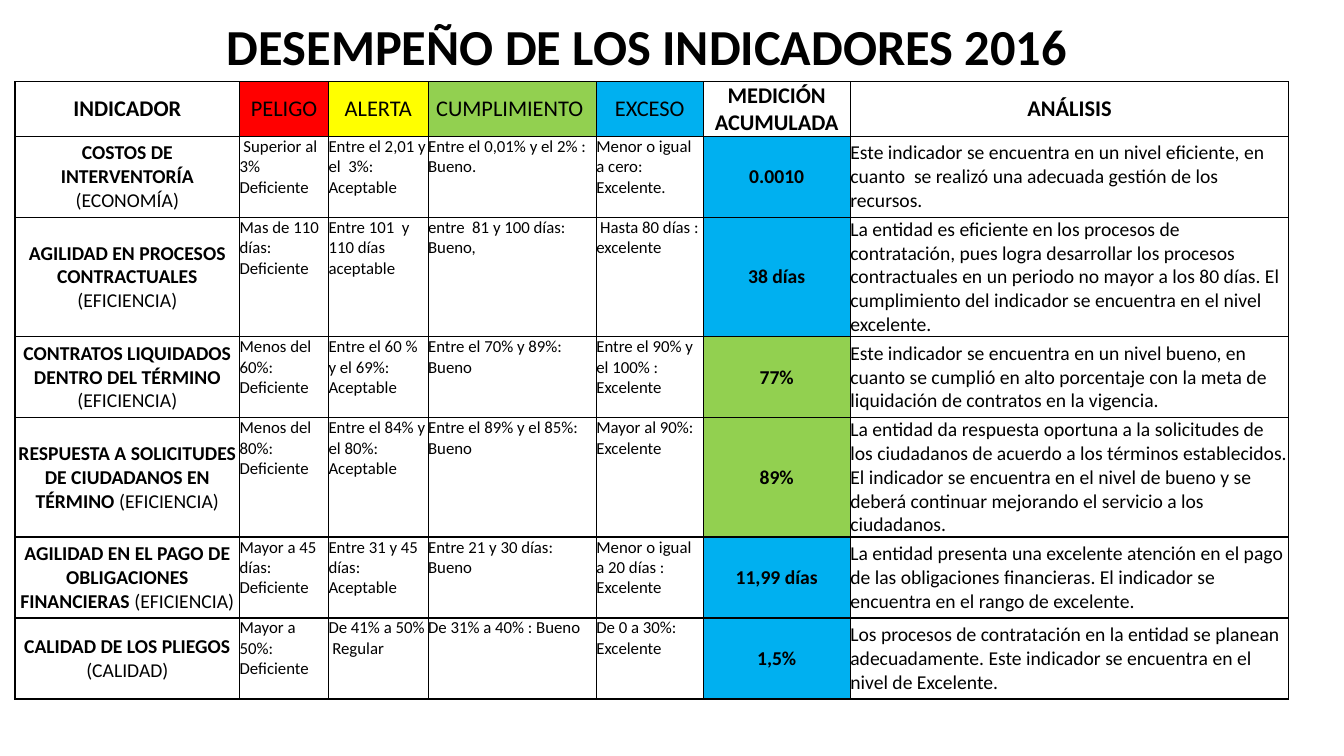
from dataclasses import dataclass

from lxml.etree import SubElement
from pptx import Presentation
from pptx.dml.color import RGBColor
from pptx.enum.text import MSO_ANCHOR as Anchor, MSO_AUTO_SIZE as AutoSize, PP_ALIGN as Align
from pptx.oxml.ns import qn
from pptx.util import Cm, Pt

COLOURS = {
    "black": "000000",
    "white": "FFFFFF",
    "danger": "FF0000",
    "alert": "FFFF00",
    "good": "92D050",
    "excellent": "00B0F0",
}
FONT = "Calibri"
COLUMN_WIDTHS = (5.66, 2.24, 2.51, 4.24, 2.69, 3.71, 11.05)
HEADER_HEIGHT = 1.36


@dataclass
class Heading:
    text: str
    fill: str = "white"
    bold: bool = True


@dataclass
class Indicator:
    name: str
    kind: str
    ranges: tuple[str, str, str, str]
    result: str
    level: str
    analysis: str
    height: float = 2.04


HEADINGS = (
    Heading("INDICADOR"),
    Heading("PELIGO", "danger", False),
    Heading("ALERTA", "alert", False),
    Heading("CUMPLIMIENTO ", "good", False),
    Heading("EXCESO", "excellent", False),
    Heading("MEDICIÓN ACUMULADA"),
    Heading("ANÁLISIS"),
)

INDICATORS = (
    Indicator(
        "COSTOS DE INTERVENTORÍA", "ECONOMÍA",
        (" Superior al 3% Deficiente", "Entre el 2,01 y el  3%: Aceptable",
         "Entre el 0,01% y el 2% : Bueno.", "Menor o igual a cero: Excelente."),
        "0.0010", "excellent",
        "Este indicador se encuentra en un nivel eficiente, en cuanto  se realizó "
        "una adecuada gestión de los recursos."),
    Indicator(
        "AGILIDAD EN PROCESOS CONTRACTUALES", "EFICIENCIA",
        ("Mas de 110 días: Deficiente", "Entre 101  y 110 días aceptable",
         "entre  81 y 100 días: Bueno,", " Hasta 80 días : excelente"),
        "38 días", "excellent",
        "La entidad es eficiente en los procesos de contratación, pues logra desarrollar "
        "los procesos contractuales en un periodo no mayor a los 80 días. El cumplimiento "
        "del indicador se encuentra en el nivel excelente.", 2.96),
    Indicator(
        "CONTRATOS LIQUIDADOS DENTRO DEL TÉRMINO", "EFICIENCIA",
        ("Menos del 60%: Deficiente", "Entre el 60 % y el 69%: Aceptable",
         "Entre el 70% y 89%: Bueno", "Entre el 90% y el 100% : Excelente"),
        "77%", "good",
        "Este indicador se encuentra en un nivel bueno, en cuanto se cumplió en alto "
        "porcentaje con la meta de liquidación de contratos en la vigencia."),
    Indicator(
        "RESPUESTA A SOLICITUDES DE CIUDADANOS EN TÉRMINO", "EFICIENCIA",
        ("Menos del 80%: Deficiente", "Entre el 84% y el 80%: Aceptable",
         "Entre el 89% y el 85%: Bueno", "Mayor al 90%: Excelente"),
        "89%", "good",
        "La entidad da respuesta oportuna a la solicitudes de los ciudadanos de acuerdo "
        "a los términos establecidos. El indicador se encuentra en el nivel de bueno y se "
        "deberá continuar mejorando el servicio a los ciudadanos.", 2.96),
    Indicator(
        "AGILIDAD EN EL PAGO DE OBLIGACIONES FINANCIERAS", "EFICIENCIA",
        ("Mayor a 45 días: Deficiente", "Entre 31 y 45 días: Aceptable",
         "Entre 21 y 30 días: Bueno", "Menor o igual a 20 días : Excelente"),
        "11,99 días", "excellent",
        "La entidad presenta una excelente atención en el pago de las obligaciones "
        "financieras. El indicador se encuentra en el rango de excelente."),
    Indicator(
        "CALIDAD DE LOS PLIEGOS", "CALIDAD",
        ("Mayor a 50%: Deficiente", "De 41% a 50%  Regular",
         "De 31% a 40% : Bueno", "De 0 a 30%: Excelente"),
        "1,5%", "excellent",
        "Los procesos de contratación en la entidad se planean adecuadamente. Este "
        "indicador se encuentra en el nivel de Excelente."),
)


def add_text(para, text: str, *, size: float, bold: bool = False, align=Align.LEFT) -> None:
    para.alignment = align
    span = para.add_run()
    span.text = text
    span.font.name = FONT
    span.font.size = Pt(size)
    span.font.bold = bold
    span.font.color.rgb = RGBColor.from_string(COLOURS["black"])


def add_borders(cell, widths: dict[str, float]) -> None:
    """Draw black cell edges; widths maps L, R, T and B to points."""
    properties = cell._tc.get_or_add_tcPr()
    for position, (side, width) in enumerate(widths.items()):
        line = SubElement(properties, qn(f"a:ln{side}"), w=str(Pt(width)))
        fill = SubElement(line, qn("a:solidFill"))
        SubElement(fill, qn("a:srgbClr"), val=COLOURS["black"])
        properties.insert(position, line)


def format_cell(cell, *, fill: str = "white", anchor=Anchor.MIDDLE,
                left: float = 1, right: float = 1):
    """Style a cell and return its paragraph."""
    cell.margin_left = cell.margin_right = cell.margin_top = cell.margin_bottom = 0
    cell.vertical_anchor = anchor
    cell.fill.solid()
    cell.fill.fore_color.rgb = RGBColor.from_string(COLOURS[fill])
    add_borders(cell, {"L": left, "R": right, "T": 1, "B": 1})
    return cell.text_frame.paragraphs[0]


def fill_header(cells) -> None:
    for column, heading in enumerate(HEADINGS):
        para = format_cell(cells[column], fill=heading.fill,
                           left=0.5 if column > 1 else 1, right=0.5 if column else 1)
        add_text(para, heading.text, size=16, bold=heading.bold, align=Align.CENTER)


def fill_indicator(cells, indicator: Indicator) -> None:
    name_cell, *range_cells, result_cell, analysis_cell = cells
    para = format_cell(name_cell)
    add_text(para, f"{indicator.name} ", size=14, bold=True, align=Align.CENTER)
    add_text(para, f"({indicator.kind})", size=14, align=Align.CENTER)
    for cell, text in zip(range_cells, indicator.ranges):
        add_text(format_cell(cell, anchor=Anchor.TOP), text, size=12)
    add_text(format_cell(result_cell, fill=indicator.level), indicator.result,
             size=14, bold=True, align=Align.CENTER)
    add_text(format_cell(analysis_cell), indicator.analysis, size=14)


def add_title(page) -> None:
    title = page.shapes.title
    title.left, title.top, title.width, title.height = Cm(5.36), Cm(0.15), Cm(21.9), Cm(1.9)
    frame = title.text_frame
    frame.word_wrap = False
    frame.auto_size = AutoSize.NONE
    frame.vertical_anchor = Anchor.TOP
    para = frame.paragraphs[0]
    para.line_spacing = 1.07
    para.space_before = Pt(0)
    para.space_after = Pt(8)
    add_text(para, "DESEMPEÑO DE LOS INDICADORES 2016", size=36, bold=True, align=Align.CENTER)


def add_indicator_table(page) -> None:
    heights = [HEADER_HEIGHT] + [indicator.height for indicator in INDICATORS]
    table = page.shapes.add_table(
        len(heights), len(COLUMN_WIDTHS), Cm(0.38), Cm(2.06),
        Cm(sum(COLUMN_WIDTHS)), Cm(sum(heights))).table
    table.first_row = table.horz_banding = False
    for column, width in zip(table.columns, COLUMN_WIDTHS):
        column.width = Cm(width)
    for row, height in zip(table.rows, heights):
        row.height = Cm(height)
    header, *body = (list(row.cells) for row in table.rows)
    fill_header(header)
    for cells, indicator in zip(body, INDICATORS):
        fill_indicator(cells, indicator)


def main() -> None:
    deck = Presentation()
    deck.slide_width, deck.slide_height = Cm(33.87), Cm(19.05)
    page = deck.slides.add_slide(deck.slide_layouts[5])
    add_title(page)
    add_indicator_table(page)
    deck.save("out.pptx")


if __name__ == "__main__":
    main()
